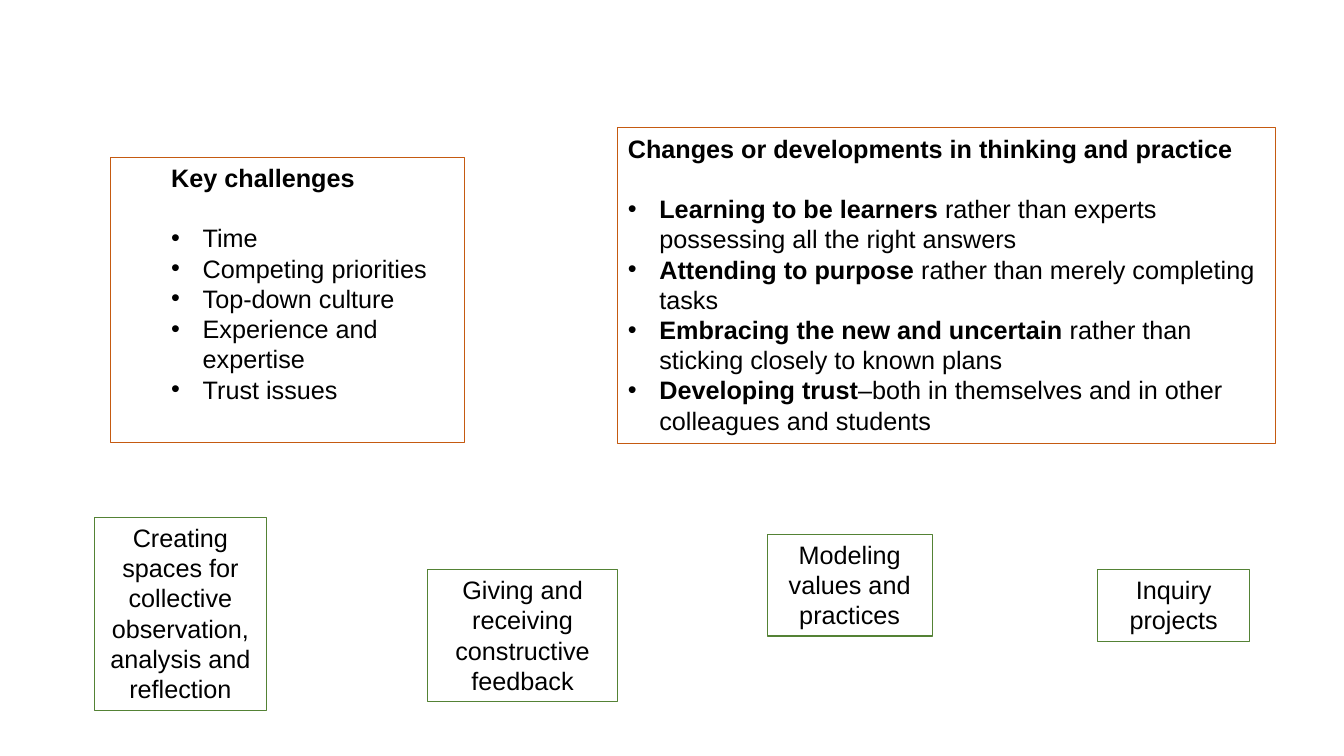
from lxml import etree
from pptx import Presentation
from pptx.dml.color import RGBColor
from pptx.enum.shapes import MSO_SHAPE
from pptx.enum.text import MSO_ANCHOR, MSO_AUTO_SIZE, PP_ALIGN
from pptx.oxml.ns import qn
from pptx.util import Pt

RECTANGLE = MSO_SHAPE.RECTANGLE
TOP = MSO_ANCHOR.TOP
GROW = MSO_AUTO_SIZE.SHAPE_TO_FIT_TEXT
LEFT, CENTER = PP_ALIGN.LEFT, PP_ALIGN.CENTER

COLORS = {"text": "000000", "challenge": "C55A11", "practice": "548235"}


class SlideBuilder:
    font = "Arial"
    size = 18
    hanging = 22.5
    heading_gap = 21.6

    def __init__(self, slide):
        self.slide = slide

    def box(self, left, top, width, height, color):
        shape = self.slide.shapes.add_shape(
            RECTANGLE, Pt(left), Pt(top), Pt(width), Pt(height))
        shape.shadow.inherit = False
        shape.fill.background()
        shape.line.color.rgb = RGBColor.from_string(COLORS[color])
        shape.line.width = Pt(0.75)
        frame = shape.text_frame
        frame.word_wrap = True
        frame.auto_size = GROW
        frame.vertical_anchor = TOP
        return frame

    def add_text(self, paragraph, parts, align=LEFT):
        """Add (text, bold) parts to a paragraph."""
        paragraph.alignment = align
        for text, bold in parts:
            run = paragraph.add_run()
            run.text = text
            run.font.name = self.font
            run.font.size = Pt(self.size)
            run.font.bold = bold
            run.font.color.rgb = RGBColor.from_string(COLORS["text"])

    def indent(self, paragraph, margin, hanging=0):
        properties = paragraph._p.get_or_add_pPr()
        properties.set("marL", str(Pt(margin)))
        properties.set("indent", str(-Pt(hanging)))
        return properties

    def bullet(self, paragraph, margin):
        properties = self.indent(paragraph, margin + self.hanging, self.hanging)
        etree.SubElement(properties, qn("a:buFont")).set("typeface", self.font)
        etree.SubElement(properties, qn("a:buChar")).set("char", "•")

    def list_box(self, bounds, heading, items, margin=0):
        frame = self.box(*bounds, "challenge")
        title = frame.paragraphs[0]
        self.add_text(title, [(heading, True)])
        self.indent(title, margin)
        title.space_after = Pt(self.heading_gap)
        for parts in items:
            paragraph = frame.add_paragraph()
            self.add_text(paragraph, parts)
            self.bullet(paragraph, margin)

    def label_box(self, bounds, text):
        frame = self.box(*bounds, "practice")
        self.add_text(frame.paragraphs[0], [(text, False)], CENTER)


def main():
    presentation = Presentation()
    presentation.slide_width, presentation.slide_height = Pt(960), Pt(540)
    builder = SlideBuilder(
        presentation.slides.add_slide(presentation.slide_layouts[6]))

    # Challenges
    challenges = ["Time", "Competing priorities", "Top-down culture",
                  "Experience and expertise", "Trust issues"]
    builder.list_box((79.2, 112.3, 252.7, 203.8), "Key challenges",
                     [[(text, False)] for text in challenges], margin=36)

    # Changes in thinking
    changes = [
        ("Learning to be learners",
         " rather than experts possessing all the right answers"),
        ("Attending to purpose", " rather than merely completing tasks"),
        ("Embracing the new and uncertain",
         " rather than sticking closely to known plans"),
        ("Developing trust",
         "–both in themselves and in other colleagues and students"),
    ]
    builder.list_box((441.4, 91.4, 469.4, 225.4),
                     "Changes or developments in thinking and practice",
                     [[(lead, True), (rest, False)] for lead, rest in changes])

    # Practices
    practices = [
        ((305.3, 406.8, 136, 94.3), "Giving and receiving constructive feedback"),
        ((67.7, 369.4, 122.4, 138.2),
         "Creating spaces for collective observation, analysis and reflection"),
        ((547.9, 381.6, 118, 72.7), "Modeling values and practices"),
        ((784, 406.8, 108.7, 51.1), "Inquiry projects"),
    ]
    for bounds, text in practices:
        builder.label_box(bounds, text)

    presentation.save("out.pptx")


if __name__ == "__main__":
    main()
